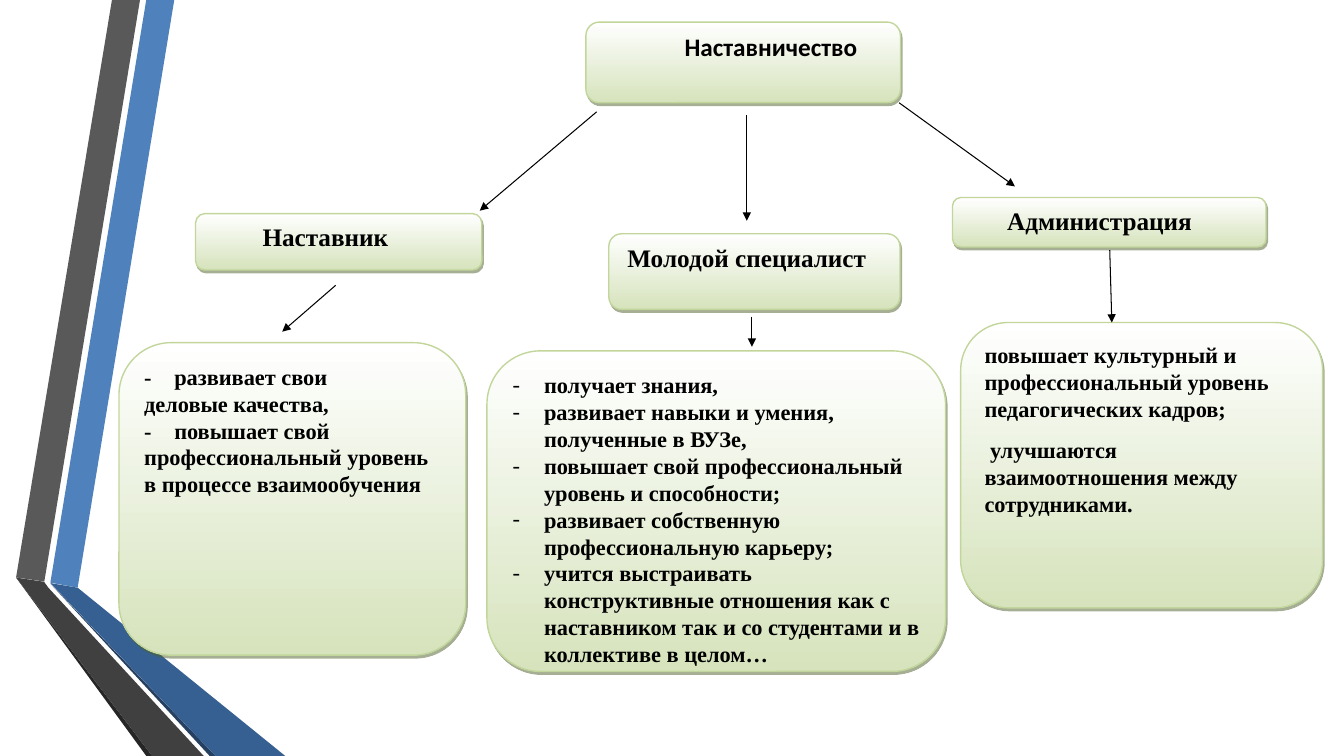
from lxml import etree
from pptx import Presentation
from pptx.dml.color import RGBColor
from pptx.enum.shapes import MSO_CONNECTOR, MSO_SHAPE
from pptx.enum.text import MSO_ANCHOR, PP_ALIGN
from pptx.oxml.ns import qn
from pptx.util import Pt

ROUND, LINE = MSO_SHAPE.ROUNDED_RECTANGLE, MSO_CONNECTOR.STRAIGHT
TOP = MSO_ANCHOR.TOP
LEFT, CENTER, RIGHT = PP_ALIGN.LEFT, PP_ALIGN.CENTER, PP_ALIGN.RIGHT
SERIF, SANS = "Times New Roman", "Calibri"
BLACK = "000000"

# Ribbon facets, measured from the ribbon's top left corner
FACETS = [
    ("4F81BD", [(24.5, 416.2), (44, 419.8), (113, 0), (93, 0)]),
    ("595959", [(88.5, 0), (68.5, 0), (0, 412.5), (20.2, 415.4)]),
    ("262626", [(0, 412.6), (93, 540), (97.2, 540)]),
    ("254061", [(24.5, 416.9), (138.3, 540), (142.5, 540)]),
    ("376092", [(24.5, 416.5), (142.5, 540), (192.3, 540), (44, 419.8)]),
    ("404040", [(134, 540), (23, 419.8), (20, 415.6), (0, 412.6), (97.2, 540)]),
]

# Text, box, right inset, alignment, font
HEADINGS = [
    ("Наставничество", (418.5, 15.8, 224.7, 57.6), 28, RIGHT, SANS),
    ("Наставник", (139.7, 152.6, 204.5, 40.3), 26, CENTER, SERIF),
    ("Молодой специалист", (434.9, 167, 208, 54), 18, CENTER, SERIF),
    ("Администрация", (680.4, 141.1, 223.9, 35.3), 21, CENTER, SERIF),
]

# Box, paragraph style, paragraphs
CARDS = [
    ((85, 244.8, 247.7, 223.2), "tab", [
        "-\tразвивает свои\vделовые качества,",
        "-\tповышает свой профессиональный уровень в процессе взаимообучения"]),
    ((347.8, 250.6, 327.6, 229), "bullet", [
        "получает знания,",
        "развивает навыки и умения, полученные в ВУЗе,",
        "повышает свой профессиональный уровень и способности;",
        "развивает собственную профессиональную карьеру;",
        "учится выстраивать конструктивные отношения как с наставником "
        "так и со студентами и в коллективе в целом…"]),
    ((686.2, 230.4, 258.5, 203.8), "spaced", [
        "повышает культурный и профессиональный уровень педагогических кадров;",
        " улучшаются взаимоотношения между сотрудниками."]),
]

ARROWS = [
    (426.2, 79.9, 342.7, 150.5),
    (533.5, 82.1, 533.5, 157.7),
    (642.2, 73.4, 725, 133.2),
    (239.8, 203.8, 201.6, 236.9),
    (537.1, 226.1, 537.1, 247.7),
    (792.7, 178.6, 794.2, 230.4),
]


def rgb(value):
    return RGBColor.from_string(value)


def add_xml(parent, tag, **attrs):
    return etree.SubElement(parent, qn(tag), {k: str(v) for k, v in attrs.items()})


def set_all(target, values):
    for name, value in values.items():
        setattr(target, name, value)


def add_ribbon(s, x, y):
    for color, points in FACETS:
        outline = [(Pt(x + px), Pt(y + py)) for px, py in points]
        builder = s.shapes.build_freeform(*outline[0], scale=1.0)
        builder.add_line_segments(outline[1:], close=True)
        sp = builder.convert_to_shape()
        sp.shadow.inherit = False
        sp.fill.solid()
        sp.fill.fore_color.rgb = rgb(color)
        sp.line.fill.background()


def add_panel(s, box):
    """Add a green gradient panel with a hard shadow and return its text frame."""
    sp = s.shapes.add_shape(ROUND, *(Pt(v) for v in box))
    sp.adjustments[0] = 0.167
    sp.fill.gradient()
    sp.fill.gradient_angle = 270
    for stop, color in zip(sp.fill.gradient_stops, ("FFFFFF", "D6E3BC")):
        stop.color.rgb = rgb(color)
    sp.line.color.rgb = rgb("C2D69B")
    sp.line.width = Pt(1)
    sp.shadow.inherit = False
    effects = sp._element.spPr.find(qn("a:effectLst"))
    shadow = add_xml(effects, "a:outerShdw", blurRad=0, dist=Pt(2.2),
                     dir=63 * 60000, algn="ctr", rotWithShape=0)
    tint = add_xml(shadow, "a:srgbClr", val="4E6128")
    add_xml(tint, "a:alpha", val=50000)
    tf = sp.text_frame
    set_all(tf, {"word_wrap": True, "vertical_anchor": TOP})
    return tf


def write(p, text, size, font, align=LEFT):
    p.text = text
    p.alignment = align
    for r in p.runs:
        set_all(r.font, {"size": Pt(size), "name": font, "bold": True})
        r.font.color.rgb = rgb(BLACK)


def add_heading(s, text, box, inset, align, font):
    tf = add_panel(s, box)
    tf.margin_right = Pt(inset)
    write(tf.paragraphs[0], text, 18, font, align)


def style_paragraph(p, style):
    pPr = p._p.get_or_add_pPr()
    if style == "spaced":
        set_all(p, {"space_before": Pt(5), "space_after": Pt(5)})
    elif style == "bullet":
        pPr.set("marL", str(Pt(22.5)))
        pPr.set("indent", str(-Pt(22.5)))
        add_xml(pPr, "a:buFont", typeface=SERIF)
        add_xml(pPr, "a:buChar", char="-")
    else:
        tabs = add_xml(pPr, "a:tabLst")
        add_xml(tabs, "a:tab", pos=Pt(21.5), algn="l")


def add_card(s, box, style, lines):
    tf = add_panel(s, box)
    for i, text in enumerate(lines):
        p = tf.add_paragraph() if i else tf.paragraphs[0]
        write(p, text, 16, SERIF)
        style_paragraph(p, style)


def add_arrow(s, *ends):
    line = s.shapes.add_connector(LINE, *(Pt(v) for v in ends))
    line.line.color.rgb = rgb(BLACK)
    line.line.width = Pt(0.75)
    add_xml(line.line._get_or_add_ln(), "a:tailEnd", type="triangle")
    add_xml(line._element.spPr, "a:effectLst")


def main():
    prs = Presentation()
    prs.slide_width, prs.slide_height = Pt(960), Pt(540)
    s = prs.slides.add_slide(prs.slide_layouts[6])
    add_ribbon(s, 11.5, 0)
    for card in CARDS:
        add_card(s, *card)
    for heading in HEADINGS:
        add_heading(s, *heading)
    for arrow in ARROWS:
        add_arrow(s, *arrow)
    prs.save("out.pptx")


if __name__ == "__main__":
    main()
